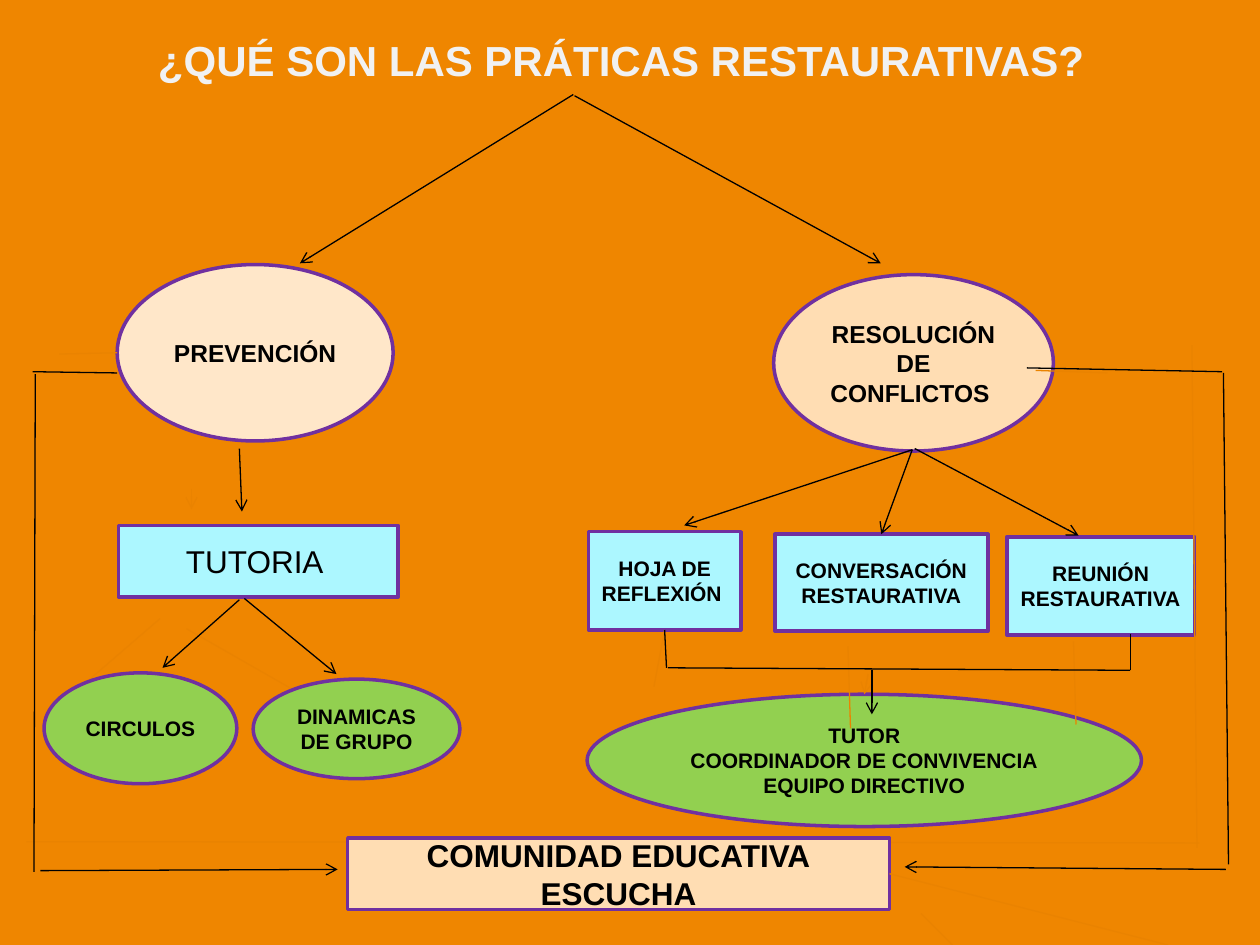
from lxml.etree import SubElement
from pptx import Presentation
from pptx.dml.color import RGBColor
from pptx.enum.shapes import MSO_CONNECTOR, MSO_SHAPE
from pptx.enum.text import MSO_ANCHOR, PP_ALIGN
from pptx.oxml.ns import qn
from pptx.util import Cm, Pt

TITLE = "¿QUÉ SON LAS PRÁTICAS RESTAURATIVAS?"
ORANGE, FAINT, BLACK, PURPLE = "EF8600", "EA8300", "000000", "7030A0"
PEACH, CREAM, AQUA, GREEN = "FFDDB3", "FFE7C9", "ACF7FF", "92D050"
OVAL, RECTANGLE = MSO_SHAPE.OVAL, MSO_SHAPE.RECTANGLE
TOP, BOTTOM, RIGHT = 0, 2, 3

NODES = {
    "resolution": (OVAL, (6.14, 2.18, 2.22, 1.4), PEACH, 14, True, ["RESOLUCIÓN DE CONFLICTOS "]),
    "prevention": (OVAL, (0.93, 2.1, 2.19, 1.4), CREAM, 14, True, ["PREVENCIÓN"]),
    "tutoring": (RECTANGLE, (0.94, 4.17, 2.22, 0.57), AQUA, 18, False, ["TUTORIA "]),
    "circles": (OVAL, (0.35, 5.34, 1.53, 0.88), GREEN, 12, True, ["CIRCULOS "]),
    "dynamics": (OVAL, (2.01, 5.39, 1.64, 0.79), GREEN, 12, True, ["DINAMICAS DE GRUPO"]),
    "sheet": (RECTANGLE, (4.67, 4.22, 1.21, 0.78), AQUA, 12, True, ["HOJA DE REFLEXIÓN "]),
    "talk": (RECTANGLE, (6.15, 4.24, 1.69, 0.77), AQUA, 12, True, ["CONVERSACIÓN RESTAURATIVA"]),
    "meeting": (RECTANGLE, (7.99, 4.26, 1.49, 0.78), AQUA, 12, True, ["REUNIÓN RESTAURATIVA"]),
    "community": (RECTANGLE, (2.76, 6.65, 4.3, 0.57), PEACH, 18, True,
                  ["COMUNIDAD EDUCATIVA", "ESCUCHA"]),
    "team": (OVAL, (4.66, 5.51, 4.4, 1.05), GREEN, 12, True,
             ["TUTOR", "COORDINADOR DE CONVIVENCIA", "EQUIPO DIRECTIVO"]),
}
FAINT_ARROWS_BEHIND = [
    (1.52, 3.88, 1.52, 4.04), (1.27, 4.91, 0.54, 5.54), (1.48, 4.99, 2.53, 5.59),
]
FAINT_LINES_BEHIND = [(0.21, 6.68, 9.52, 6.69)]
FAINT_LINES = [
    (5.27, 5, 5.19, 5.45, "sheet", BOTTOM), (6.73, 5.13, 6.75, 5.78),
    (8.52, 5.09, 8.54, 5.75), (0.93, 2.8, 0.47, 2.81), (8.79, 2.96, 8.22, 2.94),
    (9.46, 2.74, 9.5, 6.73), (7.06, 6.93, 9.27, 7.5, "community", RIGHT),
    (7.31, 7.25, 7.56, 7.5),
]
FAINT_ARROWS = [(6.89, 5.35, 6.86, 5.51)]
LINES = [
    (0.28, 2.97, 0.27, 6.92), (0.93, 2.96, 0.26, 2.95), (8.15, 2.92, 9.7, 2.95),
    (9.71, 2.96, 9.75, 6.86), (5.27, 5, 5.29, 5.3, "sheet", BOTTOM),
    (5.3, 5.3, 8.97, 5.32), (8.97, 5.03, 8.97, 5.32),
]
ARROWS = [
    (4.55, 0.75, 2.38, 2.09), (4.56, 0.76, 6.99, 2.09), (9.73, 6.9, 7.18, 6.88),
    (0.32, 6.91, 2.68, 6.9), (1.9, 3.56, 1.92, 4.06), (1.9, 4.76, 1.29, 5.3),
    (1.94, 4.75, 2.67, 5.35), (7.24, 3.57, 5.43, 4.17),
    (7.24, 3.57, 7, 4.24, "talk", TOP), (7.26, 3.56, 8.56, 4.25),
    (6.92, 5.32, 6.92, 5.67),
]


def color(value):
    """Turn a hex string into a colour."""
    return RGBColor.from_string(value)


def length(inches):
    """Turn a grid position in inches into a length."""
    return Cm(inches * 2.54)


def place(shape, frame):
    """Set the position and size of a shape."""
    for name, value in zip(("left", "top", "width", "height"), frame):
        setattr(shape, name, length(value))


def write(shape, texts, size, bold, ink, wrap=True):
    """Fill a shape with centred paragraphs."""
    frame = shape.text_frame
    frame.word_wrap = wrap
    frame.vertical_anchor = MSO_ANCHOR.MIDDLE
    for index, text in enumerate(texts):
        para = frame.add_paragraph() if index else frame.paragraphs[0]
        para.alignment = PP_ALIGN.CENTER
        span = para.add_run()
        span.text = text
        for name, value in {"name": "Arial", "size": Pt(size), "bold": bold}.items():
            setattr(span.font, name, value)
        span.font.color.rgb = color(ink)


def add_node(page, kind, frame, fill, size, bold, texts):
    """Add one outlined concept to the map."""
    box = page.shapes.add_shape(kind, *map(length, frame))
    box.shadow.inherit = False
    box.fill.solid()
    box.fill.fore_color.rgb = color(fill)
    box.line.color.rgb = color(PURPLE)
    box.line.width = Pt(2)
    write(box, texts, size, bold, BLACK)
    return box


def add_lines(page, lines, ink, boxes, arrow=False):
    """Draw lines, joining each to its box: arrows by the end, others by the start."""
    for line in lines:
        connector = page.shapes.add_connector(MSO_CONNECTOR.STRAIGHT, *map(length, line[:4]))
        connector.line.color.rgb = color(ink)
        connector.line.width = Pt(0.75)
        if arrow:
            SubElement(connector.line._get_or_add_ln(), qn("a:tailEnd"), type="arrow")
        SubElement(connector._element.spPr, qn("a:effectLst"))
        if len(line) > 4:
            join = connector.end_connect if arrow else connector.begin_connect
            join(boxes[line[4]], line[5])


def main():
    """Build the concept map."""
    deck = Presentation()
    deck.slide_width, deck.slide_height = Cm(25.4), Cm(19.05)
    page = deck.slides.add_slide(deck.slide_layouts[5])
    page.background.fill.solid()
    page.background.fill.fore_color.rgb = color(ORANGE)
    place(page.shapes.title, (1.12, 0.22, 7.62, 0.5))
    write(page.shapes.title, [TITLE], 24, True, "F1F1F1", wrap=False)

    boxes = {}
    add_lines(page, FAINT_ARROWS_BEHIND, FAINT, boxes, arrow=True)
    add_lines(page, FAINT_LINES_BEHIND, FAINT, boxes)
    for name, node in NODES.items():
        boxes[name] = add_node(page, *node)
    add_lines(page, FAINT_LINES, FAINT, boxes)
    add_lines(page, FAINT_ARROWS, FAINT, boxes, arrow=True)
    add_lines(page, LINES, BLACK, boxes)
    add_lines(page, ARROWS, BLACK, boxes, arrow=True)
    deck.save("out.pptx")


if __name__ == "__main__":
    main()
